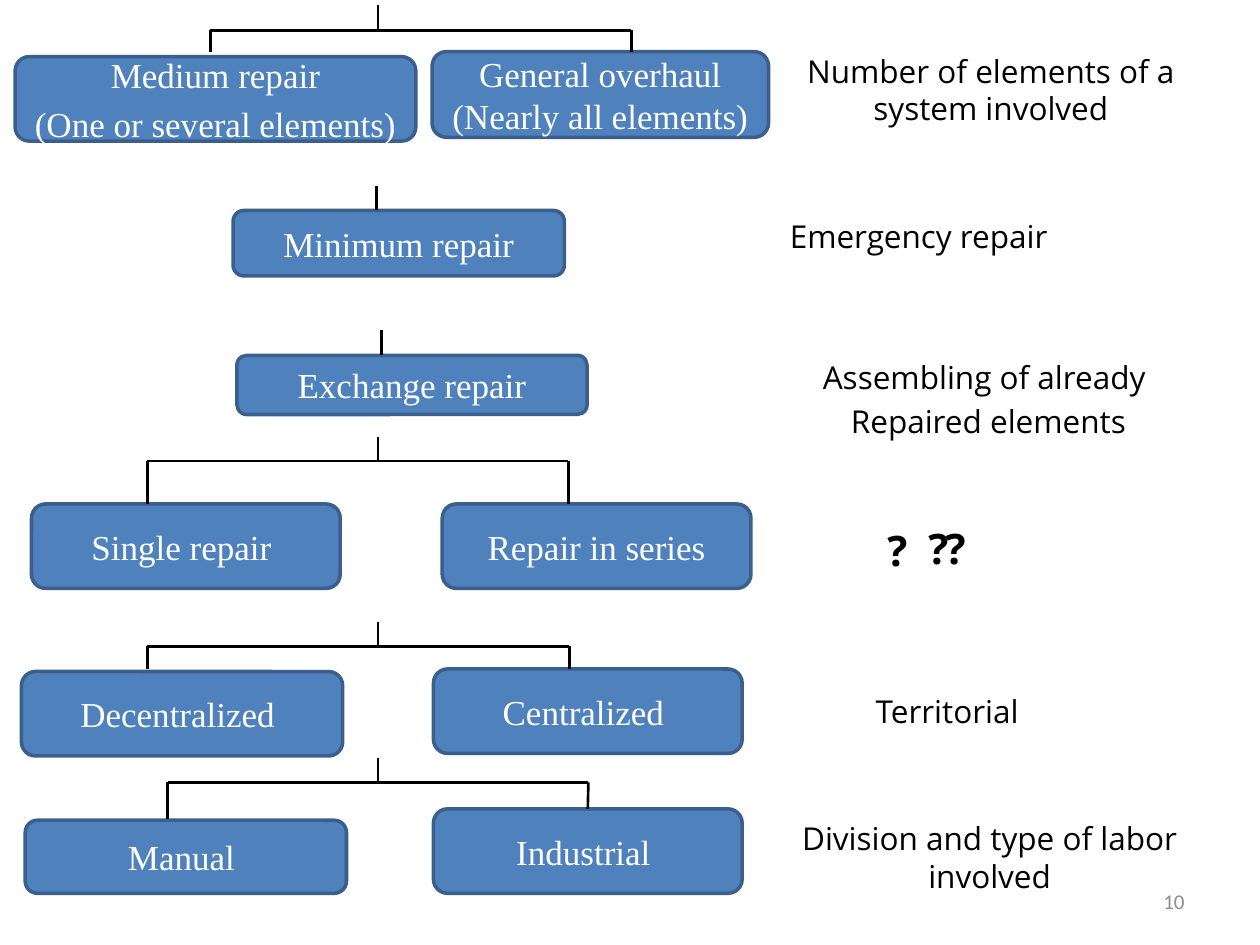
"""Build the slide that classifies kinds of repair."""
from dataclasses import dataclass

from lxml import etree
from pptx import Presentation
from pptx import util as u
from pptx.dml.color import RGBColor
from pptx.enum import shapes, text
from pptx.oxml import ns


@dataclass(frozen=True)
class Theme:
    """Colours, fonts and sizes of the slide."""
    box: RGBColor = RGBColor(0x4F, 0x81, 0xBD)
    edge: RGBColor = RGBColor(0x3A, 0x5F, 0x8C)
    light: RGBColor = RGBColor(0xFF, 0xFF, 0xFF)
    ink: RGBColor = RGBColor(0, 0, 0)
    muted: RGBColor = RGBColor(0x8C, 0x8C, 0x8C)
    box_font: str = "Times New Roman"
    note_font: str = "Open Sans"
    number_font: str = "Calibri"
    box_size: int = 20
    note_size: int = 18
    mark_size: int = 24
    number_size: int = 12
    edge_width: float = 2
    line_width: float = 1.5
    spacing: float = 0.2


CENTER = text.PP_ALIGN.CENTER
LEFT = text.PP_ALIGN.LEFT
RIGHT = text.PP_ALIGN.RIGHT


class RepairSlide:
    """Draw the elements of the repair slide in one style."""

    def __init__(self, presentation, theme):
        """Start a slide with only its body placeholder."""
        self.theme = theme
        self.slide = presentation.slides.add_slide(presentation.slide_layouts[1])
        title = self.slide.shapes.title._element
        title.getparent().remove(title)

    def add_text(self, frame, paragraphs, font, size, color, align=CENTER, bold=False, spaced=True):
        """Add paragraphs run by run, with line breaks at newlines."""
        for index, content in enumerate(paragraphs):
            paragraph = frame.add_paragraph() if index else frame.paragraphs[0]
            paragraph.alignment = align
            paragraph.space_before = u.Pt(size * self.theme.spacing if spaced else 0)
            for number, line in enumerate(content.split("\n")):
                if number:
                    paragraph.add_line_break()
                run = paragraph.add_run()
                run.text = line
                run.font.name, run.font.size, run.font.bold = font, u.Pt(size), bold
                run.font.color.rgb = color

    def style_box(self, shape, paragraphs):
        """Give a box its fill, border and centred text."""
        shape.fill.solid()
        shape.fill.fore_color.rgb = self.theme.box
        shape.line.color.rgb = self.theme.edge
        shape.line.width = u.Pt(self.theme.edge_width)
        frame = shape.text_frame
        frame.word_wrap = True
        frame.auto_size = text.MSO_AUTO_SIZE.NONE
        frame.vertical_anchor = text.MSO_ANCHOR.MIDDLE
        self.add_text(frame, paragraphs, self.theme.box_font, self.theme.box_size,
                      self.theme.light)

    def box(self, left, top, width, height, label):
        """Add a rounded box."""
        shape = self.slide.shapes.add_shape(
            shapes.MSO_SHAPE.ROUNDED_RECTANGLE, *map(u.Inches, (left, top, width, height)))
        shape.shadow.inherit = False
        self.style_box(shape, [label])
        return shape

    def body_box(self, left, top, width, height, paragraphs):
        """Turn the body placeholder into a rounded box without bullets."""
        body = self.slide.placeholders[1]
        body.left, body.top, body.width, body.height = map(u.Inches, (left, top, width, height))
        geometry = etree.SubElement(body._element.spPr, ns.qn("a:prstGeom"), prst="roundRect")
        etree.SubElement(geometry, ns.qn("a:avLst"))
        self.style_box(body, paragraphs)
        for paragraph in body.text_frame.paragraphs:
            properties = paragraph._p.get_or_add_pPr()
            properties.set("marL", "0")
            properties.set("indent", "0")
            etree.SubElement(properties, ns.qn("a:buNone"))

    def textbox(self, left, top, width, height, wrap=True):
        """Add an empty text box and return its frame."""
        shape = self.slide.shapes.add_textbox(*map(u.Inches, (left, top, width, height)))
        shape.text_frame.word_wrap = wrap
        return shape.text_frame

    def note(self, left, top, height, *paragraphs, align=CENTER, indent=0.1):
        """Add an explanation in the right column."""
        frame = self.textbox(left, top, 3.33, height)
        frame.margin_left = u.Inches(indent)
        self.add_text(frame, paragraphs, self.theme.note_font, self.theme.note_size,
                      self.theme.ink, align)

    def mark(self, left, top, width, label, wrap=True):
        """Add a bold question mark."""
        frame = self.textbox(left, top, width, 0.5, wrap)
        self.add_text(frame, [label], self.theme.note_font, self.theme.mark_size,
                      self.theme.ink, bold=True)

    def page_number(self, label):
        """Add the page number at the lower right."""
        frame = self.textbox(7.17, 6.95, 2.33, 0.4)
        frame.vertical_anchor = text.MSO_ANCHOR.MIDDLE
        self.add_text(frame, [label], self.theme.number_font, self.theme.number_size,
                      self.theme.muted, RIGHT, spaced=False)

    def line(self, x1, y1, x2, y2):
        """Add a straight line."""
        connector = self.slide.shapes.add_connector(
            shapes.MSO_CONNECTOR.STRAIGHT, *map(u.Inches, (x1, y1, x2, y2)))
        connector.line.color.rgb = self.theme.ink
        connector.line.width = u.Pt(self.theme.line_width)
        etree.SubElement(connector._element.spPr, ns.qn("a:effectLst"))
        return connector

    def fork(self, stem_top, rail, left, right, left_end, right_end):
        """Add a stem, a rail and two drops, and return the right drop."""
        self.line(3, stem_top, 3, rail)
        self.line(left, rail, right, rail)
        self.line(left, rail, left, left_end)
        return self.line(right, rail, right, right_end)


def main():
    """Compose and save the slide."""
    presentation = Presentation()
    presentation.slide_width, presentation.slide_height = u.Inches(10), u.Inches(7.5)
    slide = RepairSlide(presentation, Theme())

    slide.body_box(0.12, 0.45, 3.18, 0.67, ["Medium repair", "(One or several elements) "])
    slide.box(3.43, 0.41, 2.67, 0.68, "General overhaul\n(Nearly all elements) ")
    slide.box(1.85, 1.67, 2.63, 0.52, "Minimum repair")
    slide.box(1.88, 2.82, 2.78, 0.47, "Exchange repair")
    slide.box(0.25, 4, 2.45, 0.67, "Single repair ")
    slide.box(3.51, 4, 2.45, 0.67, "Repair in series")
    slide.box(0.17, 5.33, 2.55, 0.67, "Decentralized ")
    slide.box(3.44, 5.31, 2.45, 0.67, "Centralized ")
    slide.box(0.2, 6.51, 2.55, 0.58, "Manual ")
    industrial = slide.box(3.44, 6.42, 2.45, 0.67, "Industrial ")

    slide.fork(0.04, 0.24, 1.67, 5.01, 0.41, 0.41)
    slide.line(2.99, 1.48, 2.99, 1.67)
    slide.line(3.03, 2.62, 3.03, 2.82)
    slide.fork(3.47, 3.66, 1.17, 4.51, 4, 4)
    slide.fork(4.94, 5.13, 1.17, 4.52, 5.31, 5.31)
    slide.fork(6.02, 6.21, 1.33, 4.67, 6.5, 6.42).end_connect(industrial, 0)

    slide.note(6.2, 0.36, 0.71, "Number of elements of a system involved")
    slide.note(6.17, 1.67, 0.4, "Emergency repair", align=LEFT)
    slide.note(6.18, 2.79, 0.77, "Assembling of already ", "Repaired elements")
    slide.note(6.33, 5.44, 0.4, "Territorial", align=LEFT, indent=0.62)
    slide.note(6.19, 6.45, 0.71, "Division and type of labor involved")
    slide.mark(6.33, 4.11, 1.67, "? ")
    slide.mark(7.27, 4.1, 0.27, "?")
    slide.mark(7.4, 4.1, 0.37, "?", wrap=False)
    slide.page_number("10")

    presentation.save("out.pptx")


if __name__ == "__main__":
    main()
